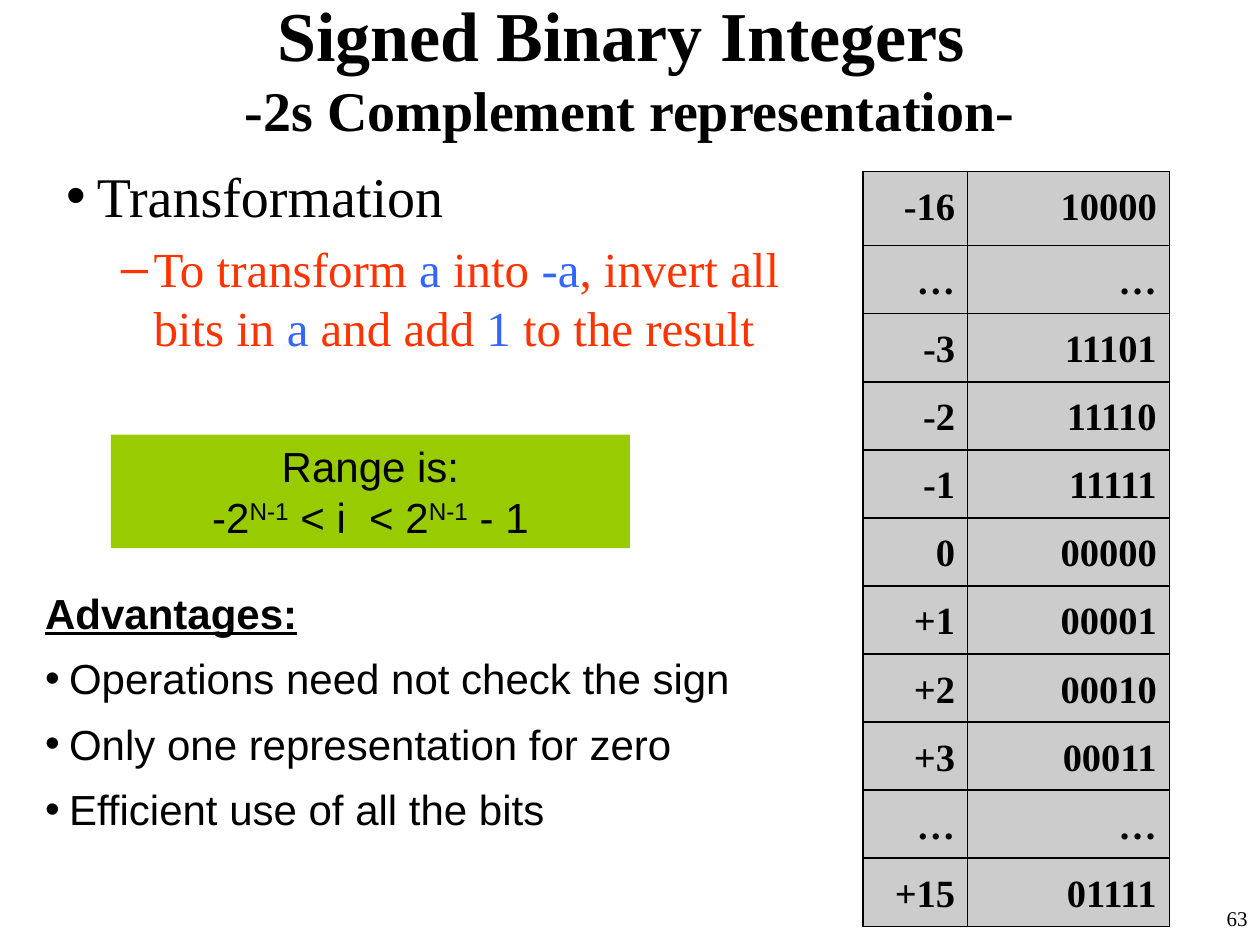
from dataclasses import dataclass

from lxml.etree import SubElement as Sub
from pptx import Presentation
from pptx.dml.color import RGBColor as Rgb
from pptx.enum.shapes import MSO_SHAPE as Shape
from pptx.enum.text import MSO_ANCHOR as Anchor, PP_ALIGN as Align
from pptx.oxml.ns import qn
from pptx.util import Inches, Pt


@dataclass(frozen=True)
class Theme:
    """Colours, fonts and type sizes of the slide."""
    ink: str = "000000"
    red: str = "FF3300"
    blue: str = "3366FF"
    green: str = "99CC00"
    grey: str = "CCCCCC"
    serif: str = "Times New Roman"
    sans: str = "Arial"
    title: int = 40
    head: int = 32
    body: int = 28
    note: int = 24
    cell: int = 22
    page: int = 12


THEME = Theme()
CODES = [
    ("-16", "10000"), ("…", "…"), ("-3", "11101"), ("-2", "11110"),
    ("-1", "11111"), ("0", "00000"), ("+1", "00001"), ("+2", "00010"),
    ("+3", "00011"), ("…", "…"), ("+15", "01111"),
]
GAINS = [
    "Operations need not check the sign",
    "Only one representation for zero",
    "Efficient use of all the bits",
]
RULE = ["To transform ", "a", " into ", "-a", ", invert all bits in ", "a",
        " and add ", "1", " to the result"]
RANGE = ["-2", "N-1", " < i  < 2", "N-1", " - 1"]


def style(run, size, face=THEME.serif, color=THEME.ink, bold=False):
    """Set the font of one run."""
    font = run.font
    font.size, font.name, font.bold = Pt(size), face, bold
    font.color.rgb = Rgb.from_string(color)


def fill(part, color):
    """Give a shape or cell a solid fill."""
    part.fill.solid()
    part.fill.fore_color.rgb = Rgb.from_string(color)


def add_box(slide, *spot):
    """Add a wrapping text box and return its text frame."""
    frame = slide.shapes.add_textbox(*map(Inches, spot)).text_frame
    frame.word_wrap = True
    return frame


def add_runs(para, parts):
    """Add each part to the paragraph as a run."""
    for part in parts:
        para.add_run().text = part
    return para.runs


def indent(para, left, hang, mark=None):
    """Set a hanging indent and, if given, a bullet mark."""
    props = para._p.get_or_add_pPr()
    props.set("marL", str(Inches(left)))
    props.set("indent", str(-Inches(hang)))
    if mark:
        Sub(props, qn("a:buFont"), typeface="Arial")
        Sub(props, qn("a:buChar"), char=mark)


def add_title(slide):
    """Add the two-line title."""
    frame = add_box(slide, 0, 0, 10, 1.07)
    frame.vertical_anchor = Anchor.MIDDLE
    para = frame.paragraphs[0]
    para.text = "Signed Binary Integers \v-2s Complement representation-"
    para.alignment = Align.CENTER
    for run, size in zip(para.runs, (THEME.title, THEME.head)):
        style(run, size, bold=True)


def add_rule(slide):
    """Add the transformation rule with its coloured terms."""
    frame = add_box(slide, 0.43, 1.23, 6.41, 2)
    head = frame.paragraphs[0]
    head.text = "Transformation"
    head.space_before = Pt(0.2 * THEME.head)
    indent(head, 0.24, 0.24, "•")
    style(head.runs[0], THEME.head)
    para = frame.add_paragraph()
    para.level = 1
    para.space_before = Pt(0.2 * THEME.body)
    indent(para, 0.69, 0.26, "–")
    for pos, run in enumerate(add_runs(para, RULE)):
        style(run, THEME.body, color=THEME.blue if pos % 2 else THEME.red)


def add_range(slide):
    """Add the green box with the range of values."""
    spot = map(Inches, (0.88, 3.45, 4.12, 0.9))
    box = slide.shapes.add_shape(Shape.RECTANGLE, *spot)
    box.shadow.inherit = False
    box.line.fill.background()
    fill(box, THEME.green)
    frame = box.text_frame
    frame.text = "Range is:"
    add_runs(frame.add_paragraph(), RANGE)
    for para in frame.paragraphs:
        para.alignment = Align.CENTER
        for run in para.runs:
            style(run, THEME.note, THEME.sans)
            if run.text == "N-1":
                run._r.get_or_add_rPr().set("baseline", "30000")


def add_gains(slide):
    """Add the list of advantages."""
    frame = add_box(slide, 0.26, 4.49, 5.7, 2.18)
    frame.text = "\n".join(["Advantages:"] + GAINS)
    for pos, para in enumerate(frame.paragraphs):
        para.line_spacing = 1.3
        indent(para, 0.19, 0.19, "•" if pos else None)
        style(para.runs[0], THEME.note, THEME.sans, bold=pos == 0)
        para.runs[0].font.underline = pos == 0


def edge(cell):
    """Draw a thin border on all sides of a cell."""
    props = cell._tc.get_or_add_tcPr()
    for side in ("lnL", "lnR", "lnT", "lnB"):
        line = Sub(props, qn(f"a:{side}"), w=str(Pt(1)))
        paint = Sub(line, qn("a:solidFill"))
        Sub(paint, qn("a:srgbClr"), val=THEME.ink)


def add_codes(slide):
    """Add the table of numbers and their bit patterns."""
    spot = map(Inches, (6.85, 1.36, 2.43, 5.99))
    table = slide.shapes.add_table(len(CODES), 2, *spot).table
    table.first_row = table.horz_banding = False
    for col, width in zip(table.columns, (0.83, 1.6)):
        col.width = Inches(width)
    for pos, (row, texts) in enumerate(zip(table.rows, CODES)):
        row.height = Inches(0.54 if pos else 0.59)
        for cell, text in zip(row.cells, texts):
            edge(cell)
            fill(cell, THEME.grey)
            para = cell.text_frame.paragraphs[0]
            para.text = text
            para.alignment = Align.RIGHT
            para.line_spacing = 1.2
            style(para.runs[0], THEME.cell, bold=True)


def add_page(slide):
    """Add the slide number."""
    para = add_box(slide, 7.92, 7.14, 2.08, 0.36).paragraphs[0]
    para.text = "63"
    para.alignment = Align.RIGHT
    style(para.runs[0], THEME.page)


def main():
    """Build the slide and save it."""
    deck = Presentation()
    deck.slide_width, deck.slide_height = Inches(10), Inches(7.5)
    slide = deck.slides.add_slide(deck.slide_layouts[6])
    for add in (add_page, add_title, add_rule, add_codes, add_range, add_gains):
        add(slide)
    deck.save("out.pptx")


if __name__ == "__main__":
    main()
